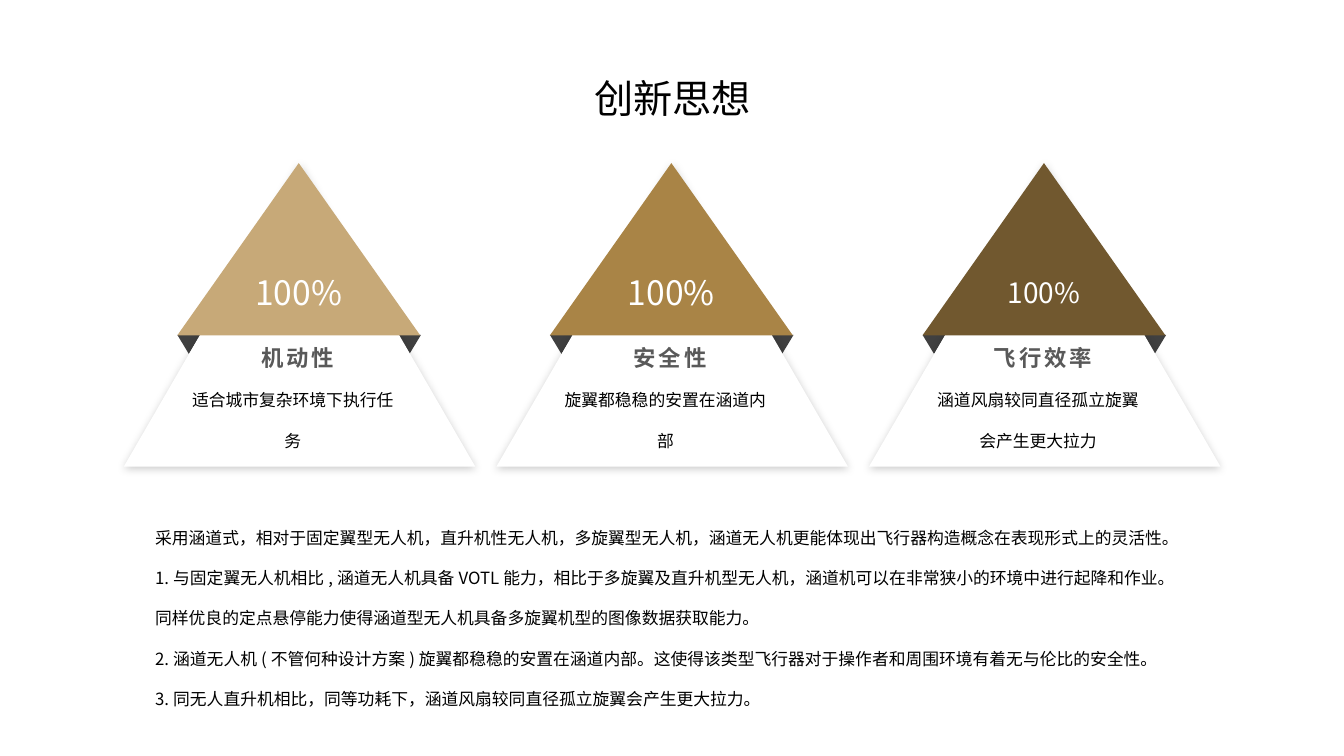
from dataclasses import dataclass

import lxml.etree
import pptx
import pptx.dml.color
import pptx.enum.shapes
import pptx.enum.text
import pptx.oxml.ns
import pptx.util

Cm = pptx.util.Cm
Pt = pptx.util.Pt
qn = pptx.oxml.ns.qn
PP_ALIGN = pptx.enum.text.PP_ALIGN
ANCHOR = pptx.enum.text.MSO_ANCHOR
FONT = "Noto Sans CJK SC"
PITCH = 9.39  # distance between neighbouring pyramids, cm


@dataclass(frozen=True)
class Pyramid:
    heading: str
    caption: str
    color: str
    percent_size: int


PYRAMIDS = [
    Pyramid("机动性", "适合城市复杂环境下执行任务", "C7A978", 24),
    Pyramid("安全性", "旋翼都稳稳的安置在涵道内部", "A98446", 24),
    Pyramid("飞行效率", "涵道风扇较同直径孤立旋翼会产生更大拉力", "71582F", 20),
]
EXPLANATION = [
    "采用涵道式，相对于固定翼型无人机，直升机性无人机，多旋翼型无人机，"
    "涵道无人机更能体现出飞行器构造概念在表现形式上的灵活性。",
    "1.与固定翼无人机相比,涵道无人机具备VOTL能力，相比于多旋翼及直升机型无人机，"
    "涵道机可以在非常狭小的环境中进行起降和作业。"
    "同样优良的定点悬停能力使得涵道型无人机具备多旋翼机型的图像数据获取能力。",
    "2.涵道无人机(不管何种设计方案)旋翼都稳稳的安置在涵道内部。"
    "这使得该类型飞行器对于操作者和周围环境有着无与伦比的安全性。",
    "3.同无人直升机相比，同等功耗下，涵道风扇较同直径孤立旋翼会产生更大拉力。",
]


def rgb(color: str) -> pptx.dml.color.RGBColor:
    return pptx.dml.color.RGBColor.from_string(color)


def place(shape, left: float, top: float, width: float, height: float) -> None:
    shape.left, shape.top = Cm(left), Cm(top)
    shape.width, shape.height = Cm(width), Cm(height)


def write(shape, *lines: str, size: float, color: str = "000000", bold: bool = False,
          align=PP_ALIGN.CENTER, anchor=ANCHOR.TOP, line_spacing: float = 1.0,
          tracking: int = 0, insets=(0.25, 0.13, 0.25, 0.13)) -> None:
    """Fill a shape with formatted paragraphs; tracking is in 1/100 pt."""
    frame = shape.text_frame
    frame.text = "\n".join(lines)
    frame.word_wrap = True
    frame.auto_size = pptx.enum.text.MSO_AUTO_SIZE.NONE
    frame.vertical_anchor = anchor
    (frame.margin_left, frame.margin_top,
     frame.margin_right, frame.margin_bottom) = map(Cm, insets)
    for paragraph in frame.paragraphs:
        paragraph.alignment = align
        paragraph.line_spacing = line_spacing
        paragraph.space_before = paragraph.space_after = Pt(0)
        properties = paragraph._p.get_or_add_pPr()
        properties.set("marL", "0")
        properties.set("indent", "0")
        lxml.etree.SubElement(properties, qn("a:buNone"))
        for run in paragraph.runs:
            run.font.size, run.font.bold = Pt(size), bold
            run.font.name = FONT
            run.font.color.rgb = rgb(color)
            run_properties = run.font._element
            lxml.etree.SubElement(run_properties, qn("a:ea")).set("typeface", FONT)
            if tracking:
                run_properties.set("spc", str(tracking))


def add_triangle(slide, left: float, top: float, width: float, height: float,
                 color: str, flipped: bool = False):
    triangle = slide.shapes.add_shape(
        pptx.enum.shapes.MSO_SHAPE.ISOSCELES_TRIANGLE,
        Cm(left), Cm(top), Cm(width), Cm(height))
    triangle.shadow.inherit = False
    triangle.fill.solid()
    triangle.fill.fore_color.rgb = rgb(color)
    triangle.line.fill.background()
    if flipped:
        triangle._element.spPr.get_or_add_xfrm().set("flipV", "1")
    return triangle


def add_soft_shadow(shape) -> None:
    effects = shape._element.spPr.find(qn("a:effectLst"))
    shadow = lxml.etree.SubElement(effects, qn("a:outerShdw"), blurRad=str(Pt(6)),
                                   dist=str(Pt(1)), dir="5400000", rotWithShape="0")
    black = lxml.etree.SubElement(shadow, qn("a:srgbClr"), val="000000")
    lxml.etree.SubElement(black, qn("a:alpha"), val="20000")


def add_text_box(slide, left: float, top: float, width: float, height: float,
                 text: str, **text_format) -> None:
    box = slide.shapes.add_textbox(Cm(left), Cm(top), Cm(width), Cm(height))
    write(box, text, **text_format)


def add_pyramid(slide, pyramid: Pyramid, offset: float) -> None:
    # Folded corners behind the white base
    for fold_left in (10.03, 4.47):
        add_triangle(slide, offset + fold_left, 8.44, 0.58, 0.48, "404040", flipped=True)
    base = add_triangle(slide, offset + 3.12, 4.11, 8.86, 7.65, "FFFFFF")
    add_soft_shadow(base)
    # Coloured top with its percentage
    peak = add_triangle(slide, offset + 4.47, 4.11, 6.12, 4.34, pyramid.color)
    write(peak, "100%", size=pyramid.percent_size, color="FFFFFF", anchor=ANCHOR.MIDDLE)
    # Heading and caption on the base
    add_text_box(slide, offset + 5.05, 8.81, 4.9, 0.56, pyramid.heading, size=16,
                 color="595959", bold=True, line_spacing=0.8, tracking=200,
                 insets=(0, 0, 0, 0))
    add_text_box(slide, offset + 4.8, 9.32, 5.41, 1.9, pyramid.caption, size=12,
                 line_spacing=2.0, insets=(0, 0, 0.25, 0))


def main() -> None:
    deck = pptx.Presentation()
    deck.slide_width, deck.slide_height = Cm(33.87), Cm(19.05)
    slide = deck.slides.add_slide(deck.slide_layouts[1])

    # Title
    title = slide.shapes.title
    place(title, 4.98, 1.78, 23.93, 1.37)
    write(title, "创新思想", size=28, anchor=ANCHOR.MIDDLE)

    # Explanation below the pyramids
    explanation = slide.placeholders[1]
    place(explanation, 3.66, 12.65, 26.57, 6.27)
    write(explanation, *EXPLANATION, size=12, align=PP_ALIGN.LEFT, line_spacing=2.0)

    # Three pyramids
    for index, pyramid in enumerate(PYRAMIDS):
        add_pyramid(slide, pyramid, index * PITCH)

    deck.save("out.pptx")


if __name__ == "__main__":
    main()
